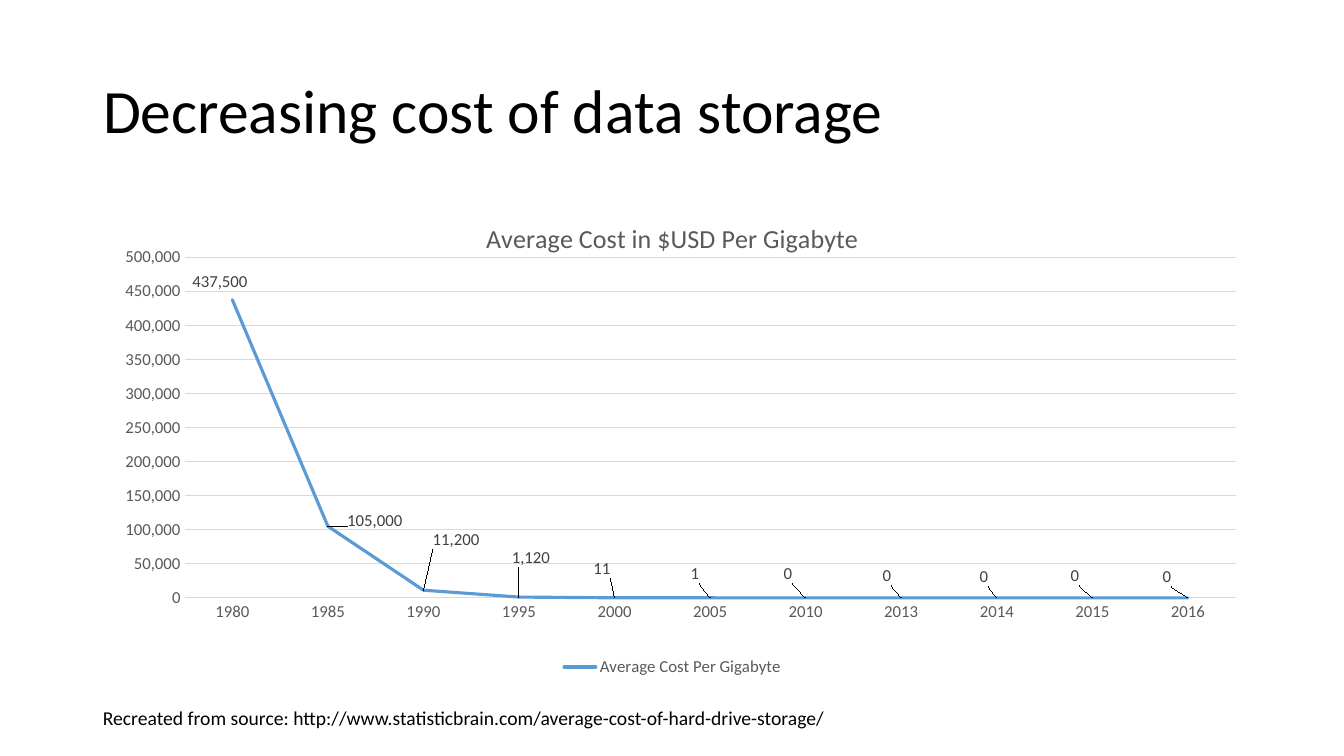
import pptx
import pptx.chart.data
import pptx.dml.color
import pptx.enum.chart
import pptx.enum.text
import pptx.oxml
import pptx.oxml.ns
import pptx.util

EMU_PER_INCH = 914400
PX_PER_INCH = 100.8
FONT = "Calibri"
BLACK = pptx.dml.color.RGBColor(0x00, 0x00, 0x00)
DARK_GRAY = pptx.dml.color.RGBColor(0x40, 0x40, 0x40)
GRAY = pptx.dml.color.RGBColor(0x59, 0x59, 0x59)
LIGHT_GRAY = pptx.dml.color.RGBColor(0xD9, 0xD9, 0xD9)
BLUE = pptx.dml.color.RGBColor(0x5B, 0x9B, 0xD5)

AXIS_MAXIMUM = 500000
PLOT_FRACTIONS = {"x": 0.079, "y": 0.117, "w": 0.907, "h": 0.71}
LABEL_RISE = 14
COSTS = [
    ("1980", 437500, (127, 81)),
    ("1985", 105000, (282, 320)),
    ("1990", 11200, (363, 339)),
    ("1995", 1120, (438, 357)),
    ("2000", 11, (509, 368)),
    ("2005", 1, (602, 373)),
    ("2010", 0, (695, 373)),
    ("2013", 0, (794, 375)),
    ("2014", 0, (891, 376)),
    ("2015", 0, (982, 375)),
    ("2016", 0, (1074, 376)),
]
NO_LEADER_LINES = (
    f"<c:extLst {pptx.oxml.ns.nsdecls('c')}>"
    '<c:ext uri="{CE6537A1-D6FC-4f65-9D91-7224C49458BB}"'
    ' xmlns:c15="http://schemas.microsoft.com/office/drawing/2012/chart">'
    '<c15:showLeaderLines val="0"/></c:ext></c:extLst>'
)


def px(length):
    return pptx.util.Emu(round(length * EMU_PER_INCH / PX_PER_INCH))


def set_attributes(target, values):
    for name, value in values.items():
        setattr(target, name, value)


def format_font(font, size, color):
    set_attributes(font, {"name": FONT, "size": pptx.util.Pt(size), "bold": False})
    font.color.rgb = color


def format_line(line, color, width):
    line.color.rgb = color
    line.width = pptx.util.Pt(width)


def make_layout(values):
    layout = pptx.oxml.parse_xml(
        f"<c:layout {pptx.oxml.ns.nsdecls('c')}><c:manualLayout/></c:layout>"
    )
    for name, value in values.items():
        child = pptx.oxml.parse_xml(
            f"<c:{name} {pptx.oxml.ns.nsdecls('c')} val=\"{value}\"/>"
        )
        layout[0].append(child)
    return layout


def place_plot(chart):
    plot_area = chart.element.find(".//" + pptx.oxml.ns.qn("c:plotArea"))
    for layout in plot_area.findall(pptx.oxml.ns.qn("c:layout")):
        plot_area.remove(layout)
    modes = {"layoutTarget": "inner", "xMode": "edge", "yMode": "edge"}
    plot_area.insert(0, make_layout({**modes, **PLOT_FRACTIONS}))


def place_labels(series, width, height):
    step = PLOT_FRACTIONS["w"] * width / len(COSTS)
    left = PLOT_FRACTIONS["x"] * width
    bottom = (PLOT_FRACTIONS["y"] + PLOT_FRACTIONS["h"]) * height
    labels = series.data_labels._element
    for index, (year, cost, (center_x, center_y)) in enumerate(COSTS):
        point_x = left + (index + 0.5) * step
        point_y = bottom - cost / AXIS_MAXIMUM * PLOT_FRACTIONS["h"] * height
        label = series.points[index].data_label
        label.position = pptx.enum.chart.XL_LABEL_POSITION.ABOVE
        format_font(label.font, 12, DARK_GRAY)
        offsets = {
            "x": round((center_x - point_x) / width, 4),
            "y": round((center_y - point_y + LABEL_RISE) / height, 4),
        }
        point_label = labels.findall(pptx.oxml.ns.qn("c:dLbl"))[index]
        point_label.insert(1, make_layout(offsets))
    labels.append(pptx.oxml.parse_xml(NO_LEADER_LINES))


def format_axes(chart):
    for axis in (chart.category_axis, chart.value_axis):
        set_attributes(axis, {
            "major_tick_mark": pptx.enum.chart.XL_TICK_MARK.NONE,
            "minor_tick_mark": pptx.enum.chart.XL_TICK_MARK.NONE,
        })
        format_font(axis.tick_labels.font, 12, GRAY)
    format_line(chart.category_axis.format.line, LIGHT_GRAY, 0.75)
    value_axis = chart.value_axis
    set_attributes(value_axis, {
        "minimum_scale": 0,
        "maximum_scale": AXIS_MAXIMUM,
        "major_unit": 50000,
        "has_major_gridlines": True,
    })
    value_axis.format.line.fill.background()
    format_line(value_axis.major_gridlines.format.line, LIGHT_GRAY, 0.75)


def format_series(series):
    series.smooth = False
    series.marker.style = pptx.enum.chart.XL_MARKER_STYLE.NONE
    format_line(series.format.line, BLUE, 2.25)
    series._element.find(".//" + pptx.oxml.ns.qn("a:ln")).set("cap", "rnd")
    series.data_labels.show_value = True
    format_font(series.data_labels.font, 12, DARK_GRAY)


def add_title(slide, left, top, width, height):
    title = slide.shapes.title
    set_attributes(title, {
        "left": px(left), "top": px(top), "width": px(width), "height": px(height),
    })
    title.text_frame.text = "Decreasing cost of data storage"
    title.text_frame.vertical_anchor = pptx.enum.text.MSO_ANCHOR.MIDDLE
    paragraph = title.text_frame.paragraphs[0]
    set_attributes(paragraph, {
        "alignment": pptx.enum.text.PP_ALIGN.LEFT, "line_spacing": 0.9,
    })
    format_font(paragraph.runs[0].font, 44, BLACK)


def add_cost_chart(slide, left, top, width, height):
    data = pptx.chart.data.CategoryChartData(number_format="#,##0")
    data.categories = [year for year, cost, center in COSTS]
    data.add_series("Average Cost Per Gigabyte", [cost for year, cost, center in COSTS])
    chart = slide.shapes.add_chart(
        pptx.enum.chart.XL_CHART_TYPE.LINE,
        px(left), px(top), px(width), px(height), data,
    ).chart
    format_font(chart.font, 10, BLACK)
    chart.has_title = True
    chart.chart_title.text_frame.text = "Average Cost in $USD Per Gigabyte"
    title_run = chart.chart_title.text_frame.paragraphs[0].runs[0]
    format_font(title_run.font, 18.6, GRAY)
    chart.has_legend = True
    set_attributes(chart.legend, {
        "position": pptx.enum.chart.XL_LEGEND_POSITION.BOTTOM,
        "include_in_layout": False,
    })
    format_font(chart.legend.font, 12, GRAY)
    format_axes(chart)
    place_plot(chart)
    chart.plots[0].vary_by_categories = False
    series = chart.plots[0].series[0]
    format_series(series)
    place_labels(series, width, height)


def add_source(slide, left, top, width, height):
    box = slide.shapes.add_textbox(px(left), px(top), px(width), px(height))
    set_attributes(box.text_frame, {
        "word_wrap": True,
        "auto_size": pptx.enum.text.MSO_AUTO_SIZE.SHAPE_TO_FIT_TEXT,
        "text": "Recreated from source: "
                "http://www.statisticbrain.com/average-cost-of-hard-drive-storage/",
    })
    format_font(box.text_frame.paragraphs[0].runs[0].font, 14, BLACK)


def main():
    presentation = pptx.Presentation()
    set_attributes(presentation, {"slide_width": px(1344), "slide_height": px(756)})
    slide = presentation.slides.add_slide(presentation.slide_layouts[5])
    add_title(slide, 93, 41, 1206, 146)
    add_cost_chart(slide, 93, 201, 1159, 480)
    add_source(slide, 93, 701, 983, 34)
    presentation.save("out.pptx")


if __name__ == "__main__":
    main()
